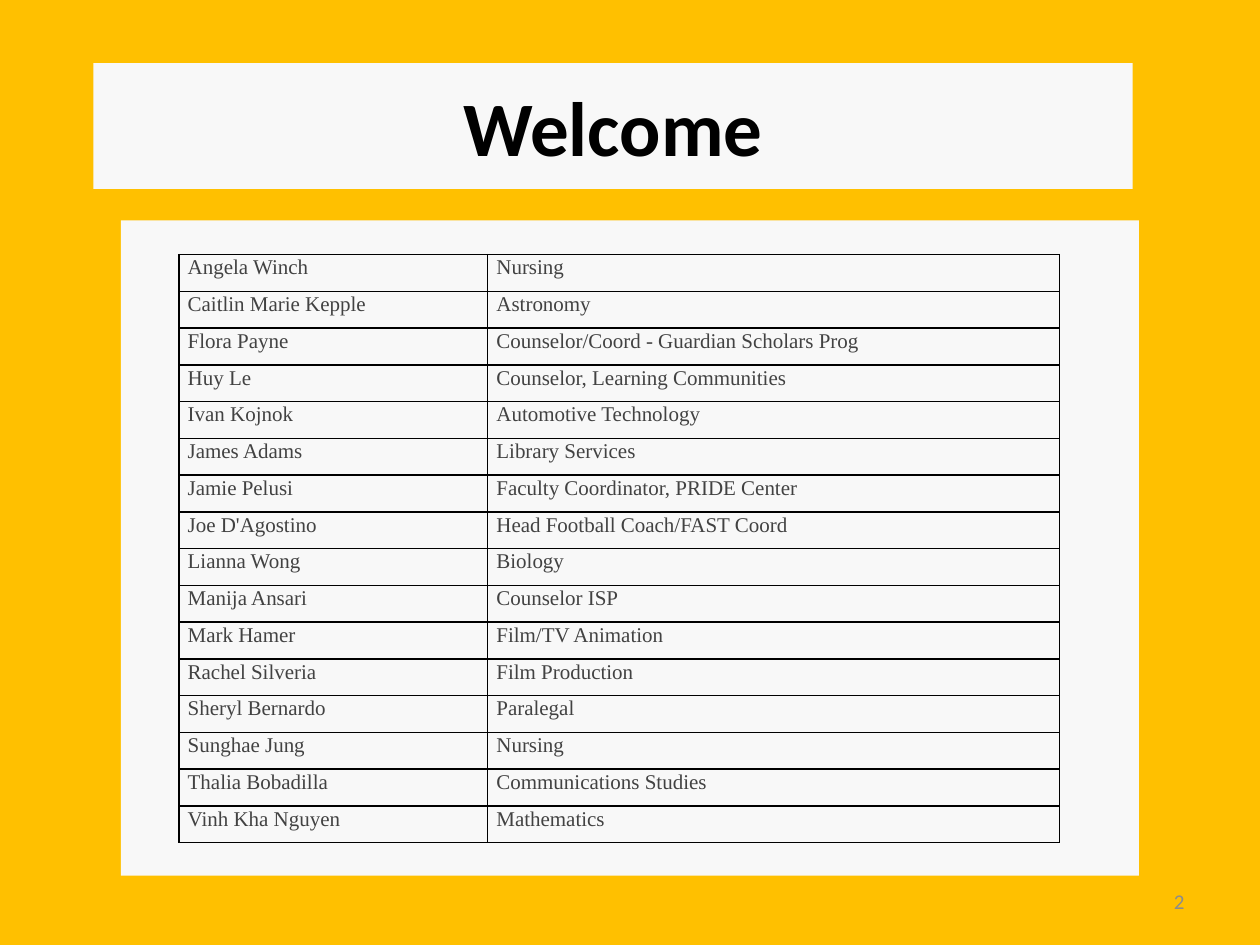
from dataclasses import dataclass
from typing import Any, NamedTuple

from lxml import etree
from pptx import Presentation
from pptx.dml import color
from pptx.enum import shapes, text
from pptx.oxml import ns
from pptx.util import Inches, Pt


@dataclass(frozen=True)
class Theme:
    back: str = "FFC000"
    panel: str = "F8F8F8"
    head: str = "000000"
    body: str = "424242"
    page: str = "8C8C8C"
    rule: str = "000000"
    sans: str = "Calibri"
    serif: str = "Times New Roman"
    large: int = 44
    small: int = 12
    line: int = 1


class Box(NamedTuple):
    left: float
    top: float
    width: float
    height: float

    def lengths(self) -> list[int]:
        return [Inches(side) for side in self]


class Guest(NamedTuple):
    name: str
    role: str


THEME = Theme()
TITLE = Box(0.74, 0.5, 8.25, 1)
PANEL = Box(0.96, 1.75, 8.08, 5.2)
TABLE = Box(1.42, 2.02, 6.99, 4.67)
PAGE = Box(7.17, 6.95, 2.33, 0.4)
COLUMNS = (2.45, 4.54)
GUESTS = [
    Guest("Angela Winch", "Nursing"),
    Guest("Caitlin Marie Kepple", "Astronomy"),
    Guest("Flora Payne", "Counselor/Coord - Guardian Scholars Prog"),
    Guest("Huy Le", "Counselor, Learning Communities"),
    Guest("Ivan Kojnok", "Automotive Technology"),
    Guest("James Adams", "Library Services"),
    Guest("Jamie Pelusi", "Faculty Coordinator, PRIDE Center"),
    Guest("Joe D'Agostino", "Head Football Coach/FAST Coord"),
    Guest("Lianna Wong", "Biology"),
    Guest("Manija Ansari", "Counselor ISP"),
    Guest("Mark Hamer", "Film/TV Animation"),
    Guest("Rachel Silveria", "Film Production"),
    Guest("Sheryl Bernardo", "Paralegal"),
    Guest("Sunghae Jung", "Nursing"),
    Guest("Thalia Bobadilla", "Communications Studies"),
    Guest("Vinh Kha Nguyen", "Mathematics"),
]


def assign(item: Any, values: dict[str, Any]) -> None:
    for key, value in values.items():
        setattr(item, key, value)


def paint(fill: Any, tint: str) -> None:
    fill.solid()
    fill.fore_color.rgb = color.RGBColor.from_string(tint)


def write(frame: Any, words: str, tint: str, style: dict[str, Any], layout: dict[str, Any]) -> None:
    frame.text = words
    line = frame.paragraphs[0]
    assign(line, layout)
    font = line.runs[0].font
    assign(font, style)
    font.color.rgb = color.RGBColor.from_string(tint)


def border(cell: Any) -> None:
    props = cell._tc.get_or_add_tcPr()
    for place, side in enumerate(("lnL", "lnR", "lnT", "lnB")):
        edge = etree.Element(ns.qn(f"a:{side}"), w=str(Pt(THEME.line)))
        solid = etree.SubElement(edge, ns.qn("a:solidFill"))
        etree.SubElement(solid, ns.qn("a:srgbClr"), val=THEME.rule)
        props.insert(place, edge)


def draw_title(slide: Any) -> None:
    title = slide.shapes.title
    assign(title, dict(zip(Box._fields, TITLE.lengths())))
    paint(title.fill, THEME.panel)
    title.text_frame.vertical_anchor = text.MSO_ANCHOR.MIDDLE
    style = {"name": THEME.sans, "size": Pt(THEME.large), "bold": True}
    write(title.text_frame, "Welcome", THEME.head, style, {"alignment": text.PP_ALIGN.CENTER})


def draw_panel(slide: Any) -> None:
    panel = slide.shapes.add_shape(shapes.MSO_SHAPE.RECTANGLE, *PANEL.lengths())
    panel.shadow.inherit = False
    paint(panel.fill, THEME.panel)
    panel.line.fill.background()
    tree = slide.shapes._spTree
    tree.remove(panel._element)
    tree.insert_element_before(panel._element, "p:sp")


def draw_table(slide: Any) -> None:
    table = slide.shapes.add_table(len(GUESTS), len(COLUMNS), *TABLE.lengths()).table
    assign(table, {"first_row": False, "horz_banding": False})
    for column, width in zip(table.columns, COLUMNS):
        column.width = Inches(width)
    inset = {
        "margin_left": Inches(0.07),
        "margin_right": Inches(0.07),
        "margin_top": 0,
        "margin_bottom": 0,
    }
    style = {"name": THEME.serif, "size": Pt(THEME.small)}
    for row, guest in zip(table.rows, GUESTS):
        for cell, words in zip(row.cells, guest):
            assign(cell, inset)
            cell.fill.background()
            write(cell.text_frame, words, THEME.body, style, {"line_spacing": 1.07})
            border(cell)


def draw_page(slide: Any) -> None:
    frame = slide.shapes.add_textbox(*PAGE.lengths()).text_frame
    assign(frame, {"word_wrap": True, "vertical_anchor": text.MSO_ANCHOR.MIDDLE})
    style = {"name": THEME.sans, "size": Pt(THEME.small)}
    write(frame, "2", THEME.page, style, {"alignment": text.PP_ALIGN.RIGHT})


def main() -> None:
    deck = Presentation()
    assign(deck, {"slide_width": Inches(10), "slide_height": Inches(7.5)})
    slide = deck.slides.add_slide(deck.slide_layouts[5])
    paint(slide.background.fill, THEME.back)
    draw_panel(slide)
    draw_title(slide)
    draw_table(slide)
    draw_page(slide)
    deck.save("out.pptx")


if __name__ == "__main__":
    main()
